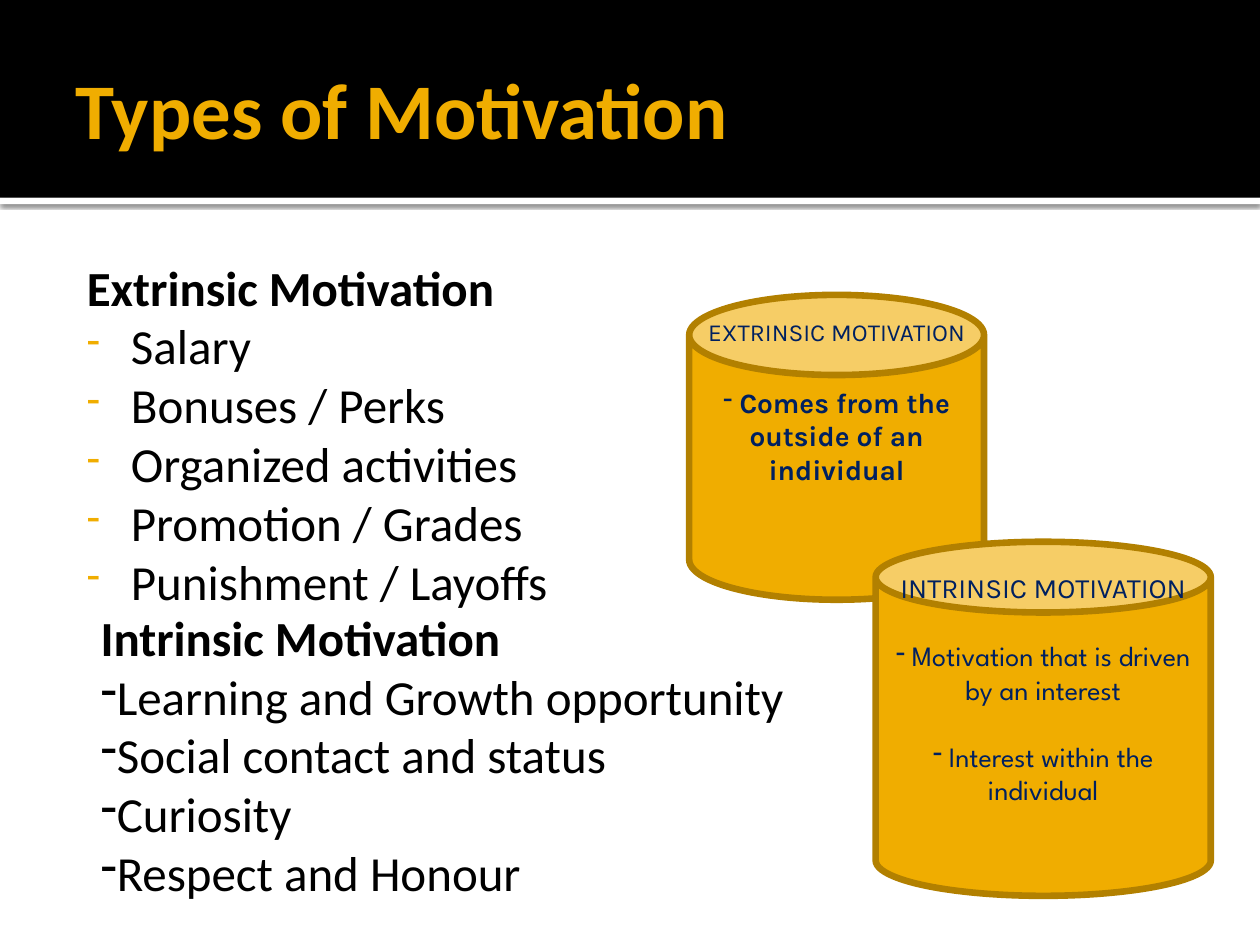
from dataclasses import dataclass

from lxml import etree
from pptx import Presentation, util as u
from pptx.dml.color import RGBColor
from pptx.enum import shapes, text
from pptx.oxml import parse_xml
from pptx.oxml.ns import nsdecls, qn

# Grid: 100 columns by 75 rows of square cells
COLS, ROWS = 100, 75
CELL = u.Inches(0.1)

BLACK = RGBColor(0x00, 0x00, 0x00)
WHITE = RGBColor(0xFF, 0xFF, 0xFF)
GOLD = RGBColor(0xF0, 0xAD, 0x00)
DARK_GOLD = RGBColor(0xB2, 0x80, 0x00)
NAVY = RGBColor(0x00, 0x20, 0x60)

LEFT, CENTER = text.PP_ALIGN.LEFT, text.PP_ALIGN.CENTER
TOP, MIDDLE = text.MSO_ANCHOR.TOP, text.MSO_ANCHOR.MIDDLE


@dataclass
class Box:
    """Place and size in columns and rows of the grid."""
    col: float
    row: float
    cols: float
    rows: float

    def emu(self) -> list[int]:
        return [round(v * CELL) for v in (self.col, self.row, self.cols, self.rows)]


@dataclass
class Can:
    """A cylinder with a label on its lid and dashed points below."""
    box: Box
    lid: float
    label: str
    label_size: int
    label_row: float
    points: list[str]
    font: str
    bold: bool
    inset: float


@dataclass
class Listing:
    """A heading followed by dashed items."""
    box: Box
    heading: str
    items: list[str]
    insets: tuple
    margin: float = 0
    hanging: float = 0
    bullet_color: RGBColor | None = None
    bullet_pct: int = 100


def add_shape(s, kind, box: Box, fill: RGBColor):
    sp = s.shapes.add_shape(kind, *box.emu())
    sp.shadow.inherit = False
    sp.fill.solid()
    sp.fill.fore_color.rgb = fill
    sp.line.fill.background()
    return sp


def set_frame(sp, insets=(0.1, 0.05, 0.1, 0.05), anchor=TOP):
    tf = sp.text_frame
    tf.word_wrap = True
    tf.vertical_anchor = anchor
    tf.margin_left, tf.margin_top, tf.margin_right, tf.margin_bottom = map(u.Inches, insets)
    return tf


def add_text(tf, words: str, *, size, color, font="Calibri", bold=False, align=LEFT,
             margin=0.0, hanging=0.0, dash=False, dash_color=None, dash_pct=100,
             before=0):
    """Write one paragraph, using the first one while it is still empty."""
    p = tf.paragraphs[0] if not tf.text else tf.add_paragraph()
    p.alignment = align
    p.space_before = u.Pt(before)
    r = p.add_run()
    r.text = words
    r.font.name, r.font.size, r.font.bold = font, u.Pt(size), bold
    r.font.color.rgb = color
    pPr = p._p.get_or_add_pPr()
    pPr.set("marL", str(u.Inches(margin)))
    pPr.set("indent", str(-u.Inches(hanging)))
    if dash:
        if dash_color is not None:
            clr = etree.SubElement(pPr, qn("a:buClr"))
            etree.SubElement(clr, qn("a:srgbClr"), val=str(dash_color))
        etree.SubElement(pPr, qn("a:buSzPct"), val=str(dash_pct * 1000))
        etree.SubElement(pPr, qn("a:buChar"), char="-")


def add_shadow(sp):
    effects = sp._element.spPr.find(qn("a:effectLst"))
    effects.append(parse_xml(
        f'<a:outerShdw {nsdecls("a")} blurRad="{u.Pt(2.5)}" dist="{u.Pt(0.8)}" '
        'dir="5400000" algn="t" rotWithShape="0">'
        '<a:srgbClr val="000000"><a:alpha val="60000"/></a:srgbClr></a:outerShdw>'))


def add_header(s, title: str):
    rect = shapes.MSO_SHAPE.RECTANGLE
    add_shadow(add_shape(s, rect, Box(0, 15.7, COLS, 0.5), WHITE))
    add_shape(s, rect, Box(0, 0, COLS, 15.7), BLACK)
    sp = s.shapes.add_textbox(*Box(5, 1.7, 90, 13.7).emu())
    tf = set_frame(sp, (0.1, 0.05, 0.05, 0.05), MIDDLE)
    add_text(tf, title, size=45, color=GOLD, bold=True)


def add_listing(s, listing: Listing):
    tf = set_frame(s.shapes.add_textbox(*listing.box.emu()), listing.insets)
    indents = dict(margin=listing.margin, hanging=listing.hanging)
    add_text(tf, listing.heading, size=28, color=BLACK, bold=True, **indents)
    for item in listing.items:
        add_text(tf, item, size=28, color=BLACK, dash=True, **indents,
                 dash_color=listing.bullet_color, dash_pct=listing.bullet_pct)


def add_can(s, can: Can):
    sp = add_shape(s, shapes.MSO_SHAPE.CAN, can.box, GOLD)
    sp.adjustments[0] = can.lid
    sp.line.color.rgb = DARK_GOLD
    sp.line.width = u.Pt(3.78)
    tf = set_frame(sp, (0.1, can.inset, 0.1, 0))
    for i, point in enumerate(can.points):
        add_text(tf, point, size=16, color=NAVY, font=can.font, bold=can.bold,
                 align=CENTER, dash=True, before=19 if i else 0)
    # Label centred on its row of the lid
    label = Box(can.box.col, can.label_row - 2, can.box.cols, 4)
    tf = set_frame(s.shapes.add_textbox(*label.emu()), anchor=MIDDLE)
    add_text(tf, can.label, size=can.label_size, color=NAVY, font="Karla", align=CENTER)


LISTINGS = [
    Listing(Box(5, 19.4, 90, 29), "Extrinsic Motivation",
            ["Salary", "Bonuses / Perks", "Organized activities",
             "Promotion / Grades", "Punishment / Layoffs"],
            (0.06, 0.1, 0.1, 0.05), 0.48, 0.35, GOLD, 80),
    Listing(Box(7, 47.7, 68, 24.6), "Intrinsic Motivation",
            ["Learning and Growth opportunity", "Social contact and status",
             "Curiosity", "Respect and Honour"],
            (0.1, 0.05, 0.1, 0.05)),
]

CANS = [
    Can(Box(54.7, 23.4, 23.4, 24.2), 0.272, "EXTRINSIC MOTIVATION", 14, 26.3,
        [" Comes from the outside of an individual"], "Karla", True, 0.08),
    Can(Box(69.5, 43, 26.6, 28.1), 0.211, "INTRINSIC MOTIVATION", 16, 46.6,
        [" Motivation that is driven by an interest",
         " Interest within the individual"], "League Spartan", False, 0.21),
]


def main():
    prs = Presentation()
    prs.slide_width, prs.slide_height = COLS * CELL, ROWS * CELL
    s = prs.slides.add_slide(prs.slide_layouts[6])
    add_header(s, "Types of Motivation")
    for can in CANS:
        add_can(s, can)
    for listing in LISTINGS:
        add_listing(s, listing)
    prs.save("out.pptx")


if __name__ == "__main__":
    main()
